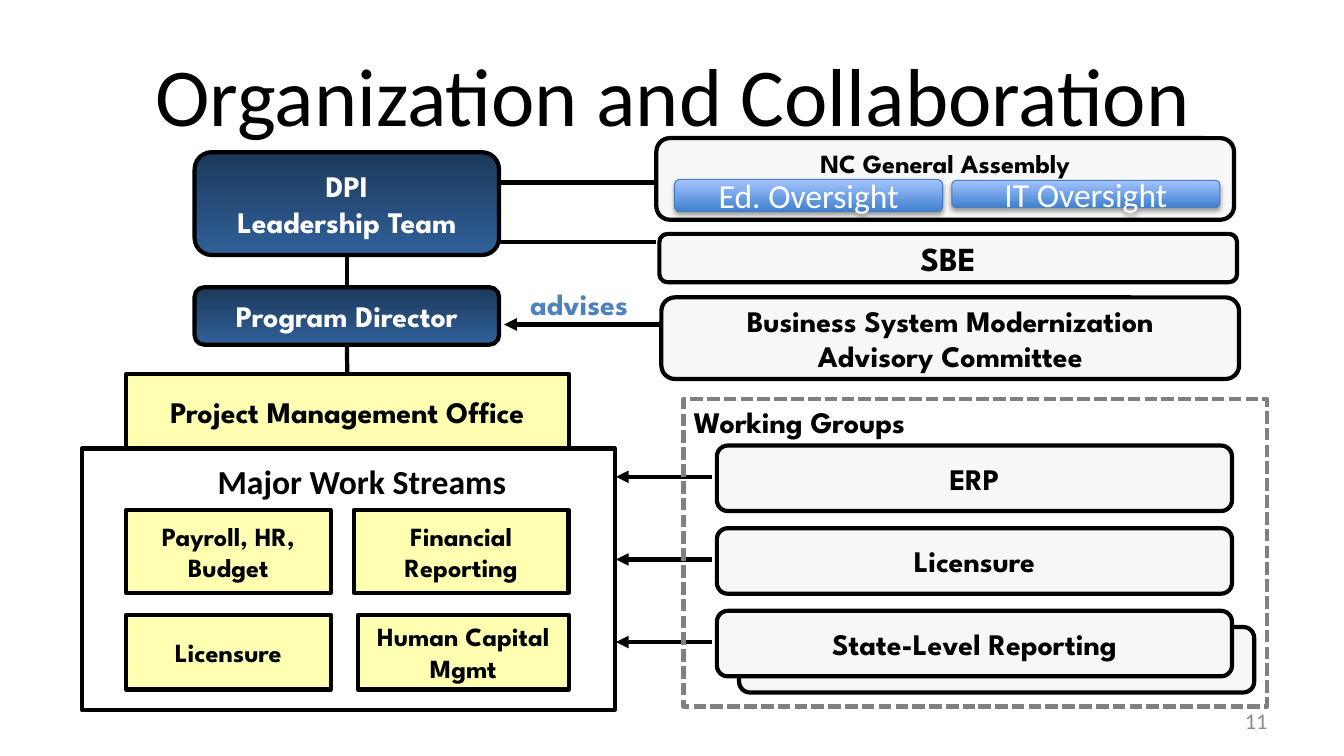
"""Build the organization and collaboration slide."""
import pptx
import pptx.dml.color
import pptx.enum.dml
import pptx.enum.shapes
import pptx.enum.text
import pptx.oxml
import pptx.util
import lxml.etree

RGB = pptx.dml.color.RGBColor
Inches = pptx.util.Inches
Pt = pptx.util.Pt
KIND = pptx.enum.shapes.MSO_SHAPE
ALIGN = pptx.enum.text.PP_ALIGN
ANCHOR = pptx.enum.text.MSO_ANCHOR

BLACK = RGB(0x00, 0x00, 0x00)
WHITE = RGB(0xFF, 0xFF, 0xFF)
PALE = RGB(0xF7, 0xF7, 0xF7)
YELLOW = RGB(0xFF, 0xFF, 0x66)
GREY = RGB(0x80, 0x80, 0x80)
SILVER = RGB(0x8C, 0x8C, 0x8C)
ACCENT = RGB(0x4F, 0x81, 0xBD)
EDGE = RGB(0x4B, 0x7E, 0xBC)
NAVY = [RGB(0x1C, 0x39, 0x5B), RGB(0x30, 0x60, 0x99)]
SKY = [RGB(0xA4, 0xC4, 0xFF), RGB(0x3F, 0x80, 0xCE)]

HEAD = "League Spartan"
BODY = "Calibri"
NS = "http://schemas.openxmlformats.org/drawingml/2006/main"
A = "{" + NS + "}"
SHADE = (
    f'<a:effectLst xmlns:a="{NS}"><a:outerShdw blurRad="39400" dist="22900" '
    'dir="5400000" rotWithShape="0"><a:srgbClr val="000000">'
    '<a:alpha val="35000"/></a:srgbClr></a:outerShdw></a:effectLst>'
)


def write(shape, text, size, color=BLACK, font=HEAD, bold=True,
          align=ALIGN.CENTER, anchor=ANCHOR.MIDDLE, wrap=True):
    """Put styled text into a shape."""
    frame = shape.text_frame
    frame.word_wrap = wrap
    frame.vertical_anchor = anchor
    frame.text = text
    for para in frame.paragraphs:
        para.alignment = align
        para.font.size = Pt(size)
        para.font.name = font
        para.font.bold = bold
        para.font.color.rgb = color


def label(slide, box, text, size, **style):
    """Add a plain text box."""
    shape = slide.shapes.add_textbox(*map(Inches, box))
    write(shape, text, size, **style)


def block(slide, box, fill=PALE, kind=KIND.ROUNDED_RECTANGLE, edge=BLACK, weight=3):
    """Add an outlined shape with no fill, a solid fill or a gradient."""
    shape = slide.shapes.add_shape(kind, *map(Inches, box))
    shape.shadow.inherit = False
    shape.line.color.rgb = edge
    shape.line.width = Pt(weight)
    if fill is None:
        shape.fill.background()
    elif isinstance(fill, list):
        shape.fill.gradient()
        shape.fill.gradient_angle = 270
        for stop, color in zip(shape.fill.gradient_stops, fill):
            stop.color.rgb = color
    else:
        shape.fill.solid()
        shape.fill.fore_color.rgb = fill
    return shape


def yellow(slide, box, text, size):
    """Add a half-transparent yellow rectangle with text."""
    shape = block(slide, box, YELLOW, KIND.RECTANGLE)
    color = shape._element.spPr.find(f"{A}solidFill/{A}srgbClr")
    lxml.etree.SubElement(color, A + "alpha", val="50000")
    write(shape, text, size)
    return shape


def link(slide, start, end, arrow=False):
    """Draw a straight black line, with an arrowhead at its end if asked."""
    line = slide.shapes.add_connector(
        pptx.enum.shapes.MSO_CONNECTOR.STRAIGHT, *map(Inches, start + end))
    line.line.color.rgb = BLACK
    line.line.width = Pt(3)
    props = line._element.spPr
    if arrow:
        lxml.etree.SubElement(props.find(A + "ln"), A + "tailEnd", type="triangle")
    lxml.etree.SubElement(props, A + "effectLst")
    return line


def join(slide, upper, lower):
    """Link the bottom of one shape to the top of another."""
    line = link(slide, (0, 0), (0, 0))
    line.begin_connect(upper, 2)
    line.end_connect(lower, 0)


def chain(slide, box):
    """Add the leadership team, the director and the management office."""
    x, y, w, _ = box
    team = block(slide, (x + 0.68, y, 3.02, 1.02), NAVY)
    write(team, "DPI\nLeadership Team", 21.3, WHITE, wrap=False)
    chief = block(slide, (x + 0.68, y + 1.34, 3.02, 0.57), NAVY)
    write(chief, "Program Director", 21.3, WHITE, wrap=False)
    office = yellow(slide, (x, y + 2.2, w, 0.74), "Project Management Office", 21.3)
    join(slide, team, chief)
    join(slide, chief, office)


def streams(slide, box):
    """Add the frame of major work streams."""
    x, y, _, _ = box
    block(slide, box, None, KIND.RECTANGLE)
    label(slide, (x + 1.25, y + 0.07, 4.15, 0.5), "Major Work Streams", 24,
          font=BODY, align=ALIGN.LEFT, anchor=ANCHOR.TOP)
    left, right = x + 0.44, x + 4.83
    rows = (
        (0.61, 0.82, "Payroll, HR, Budget", "Financial Reporting", 2.13),
        (1.65, 0.74, "Licensure", "Human Capital Mgmt", 2.09),
    )
    for down, tall, first, second, wide in rows:
        yellow(slide, (left, y + down, 2.03, tall), first, 18.7)
        yellow(slide, (right - wide, y + down, wide, tall), second, 18.7)


def bodies(slide, box):
    """Add the governing bodies and their links to the chain."""
    x, y, w, _ = box
    house = block(slide, (x, y, w, 0.81))
    write(house, "NC General Assembly", 18.7, anchor=ANCHOR.TOP, wrap=False)
    seats = (("Ed. Oversight", 0.18, 0.41, 0.32), ("IT Oversight", 2.93, 0.42, 0.27))
    for text, over, down, tall in seats:
        seat = block(slide, (x + over, y + down, 2.66, tall), SKY, edge=EDGE, weight=0.75)
        props = seat._element.spPr
        props.replace(props.find(A + "effectLst"), pptx.oxml.parse_xml(SHADE))
        write(seat, text, 24, WHITE, BODY, bold=False)
    board = block(slide, (x + 0.03, y + 0.95, w, 0.48))
    write(board, "SBE", 24, wrap=False)
    panel = block(slide, (x + 0.05, y + 1.58, w, 0.81))
    write(panel, "Business System Modernization\nAdvisory Committee", 21.3)
    for down in (0.44, 1.03):
        link(slide, (x, y + down), (x - 1.56, y + down))
    link(slide, (x + 0.05, y + 1.85), (x - 1.51, y + 1.85), arrow=True)
    label(slide, (x - 1.35, y + 1.42, 1.29, 0.46), "advises", 21.3, color=ACCENT,
          align=ALIGN.LEFT, anchor=ANCHOR.TOP, wrap=False)


def groups(slide, box):
    """Add the working groups with arrows to the work streams."""
    x, y, _, _ = box
    block(slide, (x + 0.55, y + 2.26, 5.11, 0.65))
    for row, text in enumerate(("ERP", "Licensure", "State-Level Reporting")):
        top = y + 0.46 + row * 0.82
        write(block(slide, (x + 0.33, top, 5.11, 0.65)), text, 21.3)
        link(slide, (x + 0.28, top + 0.31), (x - 0.67, top + 0.31), arrow=True)
    frame = block(slide, box, None, KIND.RECTANGLE, GREY)
    frame.line.dash_style = pptx.enum.dml.MSO_LINE.SQUARE_DOT
    write(frame, "Working Groups", 21.3, align=ALIGN.LEFT, anchor=ANCHOR.TOP, wrap=False)


def main():
    """Build and save the slide."""
    deck = pptx.Presentation()
    deck.slide_width = Inches(13.33)
    deck.slide_height = Inches(7.5)
    slide = deck.slides.add_slide(deck.slide_layouts[6])
    streams(slide, (0.81, 4.45, 5.29, 2.59))
    chain(slide, (1.25, 1.51, 4.39, 2.94))
    bodies(slide, (6.51, 1.37, 5.73, 2.39))
    groups(slide, (6.78, 3.96, 5.79, 3.05))
    label(slide, (0.67, 0.3, 12, 1.25), "Organization and Collaboration", 58.7,
          font=BODY, bold=False)
    label(slide, (9.56, 6.95, 3.11, 0.4), "11", 16, color=SILVER, font=BODY,
          bold=False, align=ALIGN.RIGHT)
    deck.save("out.pptx")


if __name__ == "__main__":
    main()
